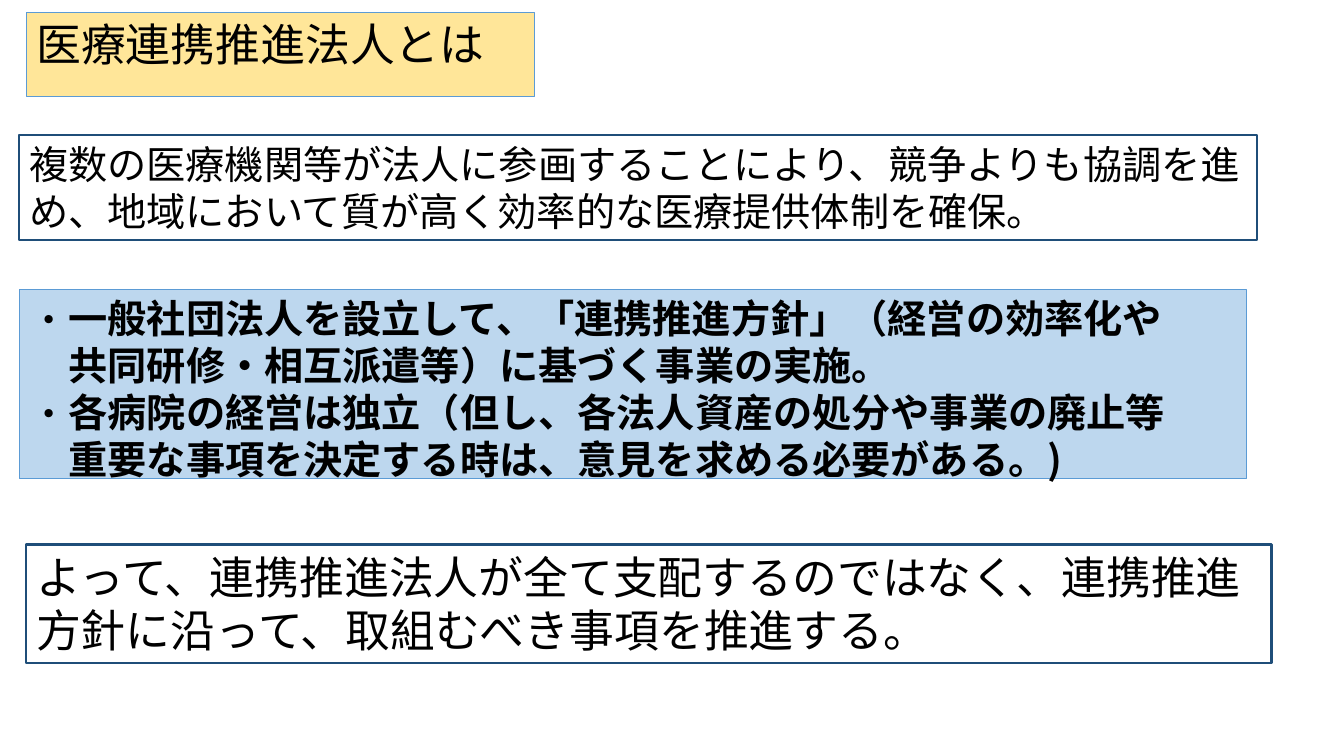
from dataclasses import dataclass
from typing import Optional

from lxml.etree import SubElement
from pptx import Presentation
from pptx.dml.color import RGBColor
from pptx.enum.shapes import MSO_SHAPE
from pptx.enum.text import MSO_ANCHOR, MSO_AUTO_SIZE, PP_ALIGN
from pptx.oxml.ns import qn
from pptx.util import Inches, Pt

FONT = "Noto Sans CJK JP"
BULLET_INDENT = Inches(0.39)


@dataclass
class Panel:
    left: float
    top: float
    width: float
    height: float
    paragraphs: list[str]
    size: int
    line: str
    line_width: float
    fill: Optional[str] = None
    bold: bool = False
    bulleted: bool = False


HEADING = Panel(0.26, 0.12, 5.04, 0.64, ["医療連携推進法人とは"],
                32, "5B9BD5", 0.75, fill="FFE699")
PURPOSE = Panel(
    0.19, 1.34, 12.28, 1.04,
    ["複数の医療機関等が法人に参画することにより、競争よりも協調を進め、"
     "地域において質が高く効率的な医療提供体制を確保。"],
    28, "1F4E79", 1.75)
# \v breaks a line inside a list item
MECHANISM = Panel(
    0.19, 2.87, 12.17, 1.98,
    ["一般社団法人を設立して、「連携推進方針」（経営の効率化や\v"
     "共同研修・相互派遣等）に基づく事業の実施。",
     "各病院の経営は独立（但し、各法人資産の処分や事業の廃止等\v"
     "重要な事項を決定する時は、意見を求める必要がある。)"],
    28, "5B9BD5", 0.75, fill="BDD7EE", bold=True, bulleted=True)
CONCLUSION = Panel(
    0.26, 5.4, 12.35, 1.18,
    ["よって、連携推進法人が全て支配するのではなく、連携推進方針に沿って、"
     "取組むべき事項を推進する。"],
    32, "1F4E79", 1.75)


def color(value: str) -> RGBColor:
    return RGBColor.from_string(value)


def set_bullet(paragraph, bulleted: bool) -> None:
    """Give the paragraph a hanging middle-dot bullet, or none."""
    properties = paragraph._p.get_or_add_pPr()
    indent = BULLET_INDENT if bulleted else 0
    properties.set("marL", str(indent))
    properties.set("indent", str(-indent))
    if bulleted:
        SubElement(properties, qn("a:buFont"), typeface=FONT)
        SubElement(properties, qn("a:buChar"), char="・")
    else:
        SubElement(properties, qn("a:buNone"))


def format_paragraph(paragraph, panel: Panel) -> None:
    paragraph.alignment = PP_ALIGN.LEFT
    paragraph.line_spacing = 1.0
    paragraph.space_before = paragraph.space_after = Pt(0)
    set_bullet(paragraph, panel.bulleted)
    font = paragraph.font
    font.size = Pt(panel.size)
    font.bold = panel.bold
    font.color.rgb = color("000000")
    font.name = FONT
    SubElement(font._element, qn("a:ea"), typeface=FONT)


def fill_panel(shape, panel: Panel) -> None:
    """Place the shape, then give it the panel's style and text."""
    shape.left, shape.top = Inches(panel.left), Inches(panel.top)
    shape.width, shape.height = Inches(panel.width), Inches(panel.height)
    if panel.fill:
        shape.fill.solid()
        shape.fill.fore_color.rgb = color(panel.fill)
    else:
        shape.fill.background()
    shape.line.color.rgb = color(panel.line)
    shape.line.width = Pt(panel.line_width)

    frame = shape.text_frame
    frame.word_wrap = True
    frame.auto_size = MSO_AUTO_SIZE.SHAPE_TO_FIT_TEXT
    frame.vertical_anchor = MSO_ANCHOR.TOP
    frame.text = "\n".join(panel.paragraphs)
    for paragraph in frame.paragraphs:
        format_paragraph(paragraph, panel)


def add_panel(slide, panel: Panel) -> None:
    shape = slide.shapes.add_shape(
        MSO_SHAPE.RECTANGLE, Inches(panel.left), Inches(panel.top),
        Inches(panel.width), Inches(panel.height))
    shape.shadow.inherit = False
    fill_panel(shape, panel)


def main() -> None:
    presentation = Presentation()
    presentation.slide_width = Inches(13.33)
    presentation.slide_height = Inches(7.5)
    slide = presentation.slides.add_slide(presentation.slide_layouts[1])
    fill_panel(slide.shapes.title, HEADING)
    fill_panel(slide.placeholders[1], MECHANISM)
    for panel in (PURPOSE, CONCLUSION):
        add_panel(slide, panel)
    presentation.save("out.pptx")


if __name__ == "__main__":
    main()
